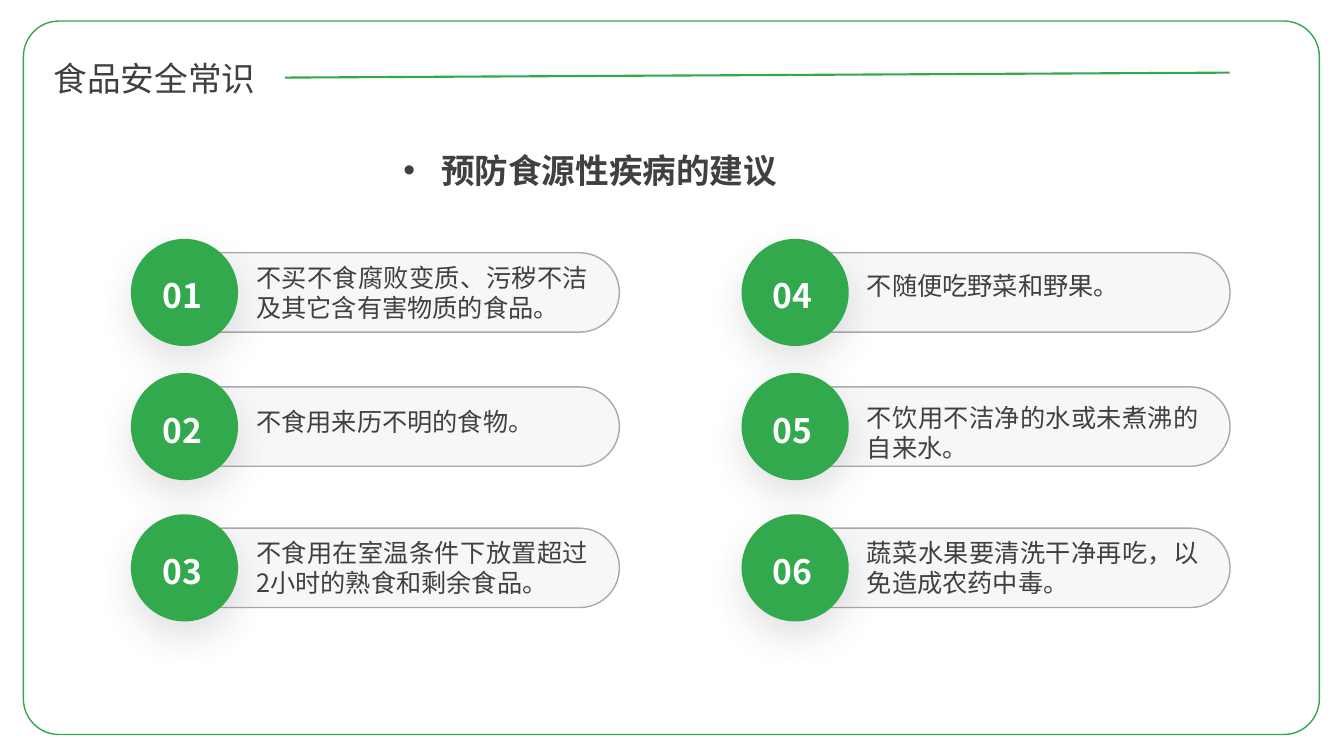
"""Builds the food safety slide with six numbered recommendations."""
from lxml.etree import SubElement
from pptx import Presentation
from pptx.dml.color import RGBColor
from pptx.enum.shapes import MSO_CONNECTOR, MSO_SHAPE
from pptx.enum.text import MSO_ANCHOR, MSO_AUTO_SIZE, PP_ALIGN
from pptx.oxml import parse_xml
from pptx.oxml.ns import nsdecls, qn
from pptx.util import Cm, Pt

FONT = "Noto Sans CJK SC"
GREEN, DARK, WHITE = "31A94C", "404040", "FFFFFF"
PILL_FILL, PILL_LINE = "F7F7FA", "A6AAA9"
COLUMN_LEFTS = (3.3, 18.69)
ROW_TOPS = (6.02, 9.4, 12.96)
DISC = 2.7
ADVICE = (
    ("不买不食腐败变质、污秽不洁及其它含有害物质的食品。", 0.58),
    ("不食用来历不明的食物。", 0.84),
    ("不食用在室温条件下放置超过2小时的熟食和剩余食品。", 0.58),
    ("不随便吃野菜和野果。", 0.79),
    ("不饮用不洁净的水或未煮沸的自来水。", 0.74),
    ("蔬菜水果要清洗干净再吃，以免造成农药中毒。", 0.58),
)


def color(value):
    return RGBColor.from_string(value)


def place(shape, left, top, width, height):
    shape.left, shape.top = Cm(left), Cm(top)
    shape.width, shape.height = Cm(width), Cm(height)


def write(shape, text, size, ink=DARK, bold=False, wrap=True, inset=None):
    frame = shape.text_frame
    frame.text = text
    frame.word_wrap = wrap
    frame.auto_size = MSO_AUTO_SIZE.SHAPE_TO_FIT_TEXT
    frame.vertical_anchor = MSO_ANCHOR.TOP
    if inset is not None:
        frame.margin_left = frame.margin_right = Cm(inset)
        frame.margin_top = frame.margin_bottom = Cm(inset)
    paragraph = frame.paragraphs[0]
    paragraph.alignment = PP_ALIGN.JUSTIFY
    paragraph.space_before = Pt(0)
    font = paragraph.font
    font.size, font.bold, font.name = Pt(size), bold, FONT
    font.color.rgb = color(ink)
    SubElement(font._element, qn("a:ea"), typeface=FONT)


def add_panel(shapes, kind, box, fill, line=None, corner=None):
    panel = shapes.add_shape(kind, *map(Cm, box))
    panel.shadow.inherit = False
    panel.fill.solid()
    panel.fill.fore_color.rgb = color(fill)
    if corner is not None:
        panel.adjustments[0] = corner
    if line:
        panel.line.color.rgb = color(line)
        panel.line.width = Pt(1)
    else:
        panel.line.fill.background()
    return panel


def add_soft_shadow(shape):
    effects = shape._element.spPr.find(qn("a:effectLst"))
    effects.append(parse_xml(
        f'<a:outerShdw {nsdecls("a")} blurRad="{Pt(26)}" dist="{Pt(11)}" '
        f'dir="5400000" algn="ctr" rotWithShape="0"><a:srgbClr val="{DARK}">'
        '<a:alpha val="14000"/></a:srgbClr></a:outerShdw>'))


def add_label(shapes, box, text, size, **style):
    write(shapes.add_textbox(*map(Cm, box)), text, size, inset=0, **style)


def add_advice(slide, number, left, top, text, text_drop):
    shapes = slide.shapes.add_group_shape().shapes
    add_panel(shapes, MSO_SHAPE.ROUNDED_RECTANGLE,
              (left + 1.29, top + 0.35, 11.02, 2), PILL_FILL, PILL_LINE, 0.5)
    disc = add_panel(shapes, MSO_SHAPE.OVAL, (left, top, DISC, DISC), GREEN)
    add_soft_shadow(disc)
    line_count = 2 if len(text) > 13 else 1
    add_label(shapes, (left + 3.16, top + text_drop, 8.36, 0.77 * line_count),
              text, 18)
    add_label(shapes, (left + 0.79, top + 0.92, 1.04, 1.02), f"{number:02d}",
              24, ink=WHITE, bold=True, wrap=False)


def add_frame(slide):
    frame = add_panel(slide.shapes, MSO_SHAPE.ROUNDED_RECTANGLE,
                      (0.59, 0.53, 32.66, 17.98), WHITE, GREEN, 0.05)
    slide.shapes._spTree.insert(2, frame._element)


def add_heading(slide):
    title = slide.shapes.title
    place(title, 1.1, 1.32, 6.08, 1.27)
    write(title, "食品安全常识", 24)
    rule = slide.shapes.add_connector(
        MSO_CONNECTOR.STRAIGHT, Cm(7.18), Cm(1.96), Cm(30.99), Cm(1.83))
    rule.begin_connect(title, 3)
    rule.line.color.rgb = color(GREEN)
    rule.line.width = Pt(1.5)
    SubElement(rule._element.spPr, qn("a:effectLst"))


def add_subheading(slide):
    subheading = slide.placeholders[1]
    place(subheading, 9.91, 3.63, 12.8, 1.42)
    properties = subheading.text_frame.paragraphs[0]._p.get_or_add_pPr()
    properties.set("marL", "0")
    properties.set("indent", "0")
    SubElement(properties, qn("a:buNone"))
    write(subheading, "预防食源性疾病的建议", 24, bold=True)
    subheading.text_frame.auto_size = MSO_AUTO_SIZE.NONE
    subheading.text_frame.vertical_anchor = MSO_ANCHOR.MIDDLE
    subheading.text_frame.paragraphs[0].line_spacing = 0.9


def main():
    presentation = Presentation()
    presentation.slide_width, presentation.slide_height = Cm(33.87), Cm(19.05)
    slide = presentation.slides.add_slide(presentation.slide_layouts[1])
    add_frame(slide)
    add_heading(slide)
    add_subheading(slide)
    for index, (text, text_drop) in enumerate(ADVICE):
        column, row = divmod(index, len(ROW_TOPS))
        add_advice(slide, index + 1, COLUMN_LEFTS[column], ROW_TOPS[row],
                   text, text_drop)
    presentation.save("out.pptx")


if __name__ == "__main__":
    main()
